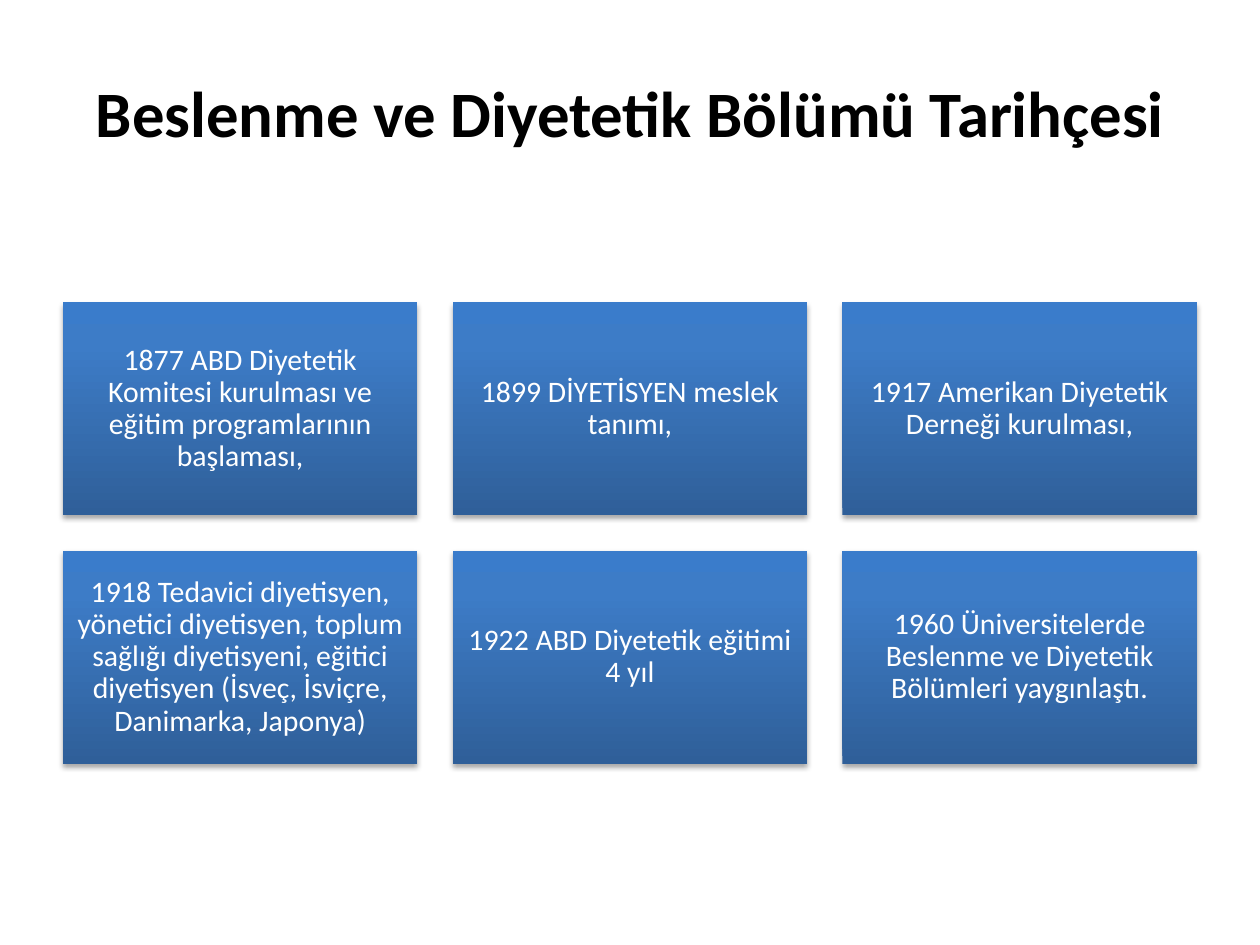
from pptx import Presentation
from pptx.dml.color import RGBColor
from pptx.enum.shapes import MSO_SHAPE
from pptx.enum.text import MSO_ANCHOR, PP_ALIGN
from pptx.oxml import parse_xml
from pptx.oxml.ns import nsdecls, qn
from pptx.util import Inches, Pt

RECTANGLE = MSO_SHAPE.RECTANGLE
MIDDLE = MSO_ANCHOR.MIDDLE
CENTER = PP_ALIGN.CENTER

FONT = "Calibri"
TITLE_ONLY = 5
COLUMNS = 3
GAP = Inches(0.28)
CARD_STOPS = [(0, "2F5F99"), (80, "3D7CC7"), (100, "3A7CCB")]

TITLE = "Beslenme ve Diyetetik Bölümü Tarihçesi"
MILESTONES = [
    "1877 ABD Diyetetik Komitesi kurulması ve eğitim programlarının başlaması,",
    "1899 DİYETİSYEN meslek tanımı,",
    "1917 Amerikan Diyetetik Derneği kurulması,",
    "1918 Tedavici diyetisyen, yönetici diyetisyen, toplum sağlığı diyetisyeni, "
    "eğitici diyetisyen (İsveç, İsviçre, Danimarka, Japonya)",
    "1922 ABD Diyetetik eğitimi 4 yıl",
    "1960 Üniversitelerde Beslenme ve Diyetetik Bölümleri yaygınlaştı.",
]


def color(hex_text):
    return RGBColor.from_string(hex_text)


def write_text(shape, text, size, hex_text, bold=False):
    frame = shape.text_frame
    frame.word_wrap = True
    frame.vertical_anchor = MIDDLE
    frame.text = text
    para = frame.paragraphs[0]
    para.alignment = CENTER
    para.line_spacing = 0.9
    para.font.name = FONT
    para.font.size = Pt(size)
    para.font.bold = bold
    para.font.color.rgb = color(hex_text)


def fill_gradient(shape, stops):
    """Fill from bottom to top with (percent, hex colour) stops."""
    shape.fill.gradient()
    shape.fill.gradient_angle = 90
    stop_xml = "".join(
        f'<a:gs pos="{percent * 1000}"><a:srgbClr val="{hex_text}"/></a:gs>'
        for percent, hex_text in stops
    )
    gradient = shape._element.spPr.find(qn("a:gradFill"))
    gradient.replace(
        gradient.find(qn("a:gsLst")),
        parse_xml(f'<a:gsLst {nsdecls("a")}>{stop_xml}</a:gsLst>'),
    )


def add_soft_shadow(shape):
    shape.shadow.inherit = False
    shape._element.spPr.find(qn("a:effectLst")).append(parse_xml(
        f'<a:outerShdw {nsdecls("a")} blurRad="{Pt(3.1)}" dist="{Pt(1.8)}" '
        'dir="5400000" rotWithShape="0"><a:srgbClr val="000000">'
        '<a:alpha val="35000"/></a:srgbClr></a:outerShdw>'
    ))


def add_card(page, box, text):
    card = page.shapes.add_shape(RECTANGLE, *box)
    fill_gradient(card, CARD_STOPS)
    card.line.fill.background()
    add_soft_shadow(card)
    frame = card.text_frame
    frame.margin_left = frame.margin_right = Inches(0.07)
    frame.margin_top = frame.margin_bottom = Inches(0.07)
    write_text(card, text, 17, "FFFFFF")


def place_title(page, box):
    title = page.shapes.title
    title.left, title.top, title.width, title.height = box
    write_text(title, TITLE, 37, "000000", bold=True)


def add_card_grid(page, box, texts):
    left, top, width, height = box
    rows = -(-len(texts) // COLUMNS)
    card_width = (width - GAP * (COLUMNS - 1)) // COLUMNS
    card_height = (height - GAP * (rows - 1)) // rows
    for index, text in enumerate(texts):
        row, column = divmod(index, COLUMNS)
        card_left = left + column * (card_width + GAP)
        card_top = top + row * (card_height + GAP)
        add_card(page, (card_left, card_top, card_width, card_height), text)


def main():
    deck = Presentation()
    deck.slide_width, deck.slide_height = Inches(10), Inches(7.5)
    page = deck.slides.add_slide(deck.slide_layouts[TITLE_ONLY])
    margin = int(deck.slide_width * 0.05)
    content_width = deck.slide_width - 2 * margin
    place_title(page, (margin, int(deck.slide_height * 0.04),
                       content_width, Inches(1.25)))
    add_card_grid(page, (margin, int(deck.slide_height * 0.32),
                         content_width, Inches(3.66)), MILESTONES)
    deck.save("out.pptx")


if __name__ == "__main__":
    main()
